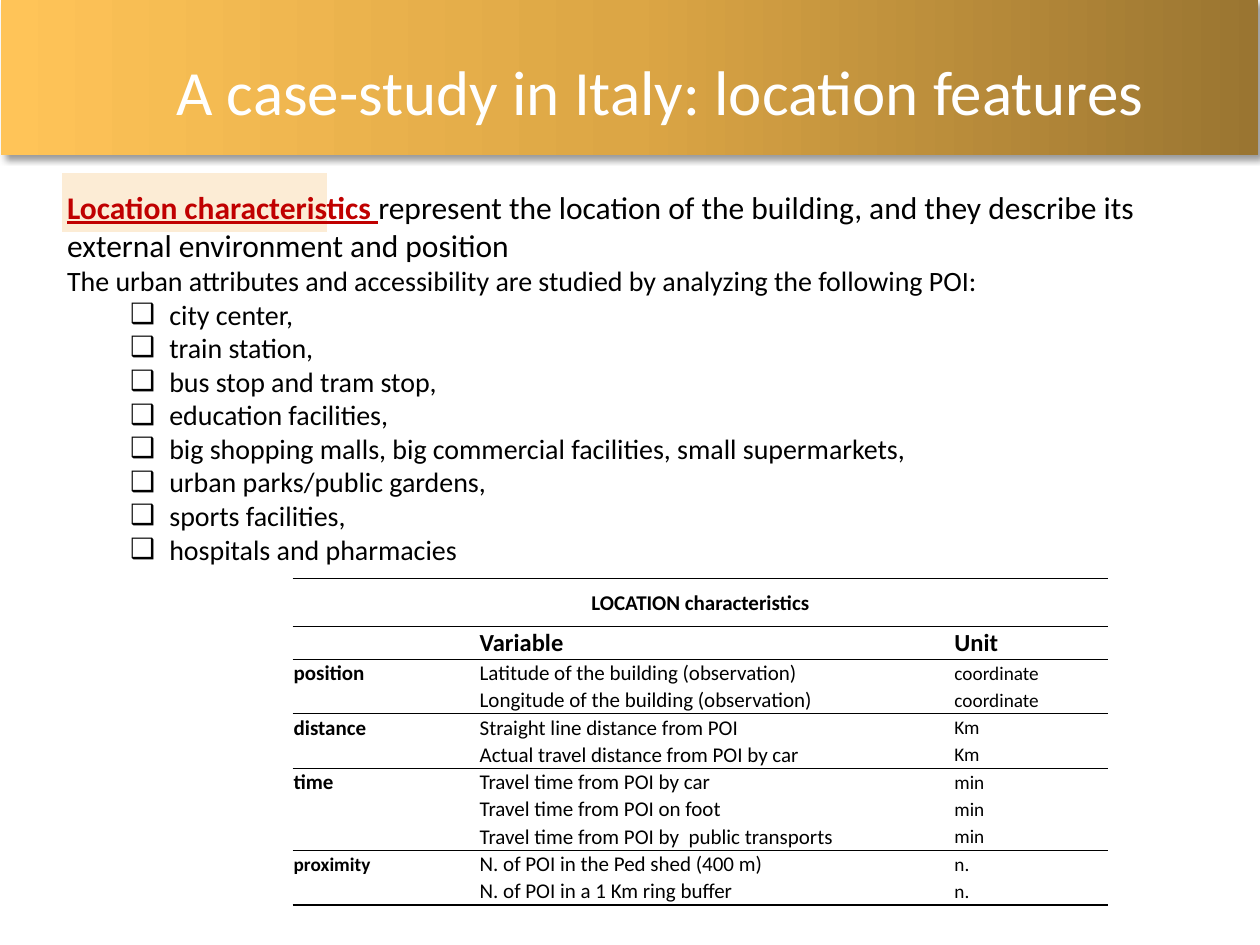
from lxml import etree
from pptx import Presentation, util as u
from pptx.dml.color import RGBColor
from pptx.enum import shapes, text
from pptx.oxml import parse_xml
from pptx.oxml.ns import nsdecls, qn

FONT = "Calibri"
WHITE = RGBColor(0xFF, 0xFF, 0xFF)
BLACK = RGBColor(0, 0, 0)
CRIMSON = RGBColor(0xC0, 0, 0)
CREAM = RGBColor(0xFC, 0xEC, 0xD5)
GOLDS = (RGBColor(0xFF, 0xC4, 0x58), RGBColor(0xDC, 0xA6, 0x45), RGBColor(0x9A, 0x75, 0x31))
NO_GRID_STYLE = "{2D5ABB26-0587-4C30-8999-92F81FD0307C}"

POINTS_OF_INTEREST = (
    "city center,",
    "train station,",
    "bus stop and tram stop,",
    "education facilities,",
    "big shopping malls, big commercial facilities, small supermarkets,",
    "urban parks/public gardens,",
    "sports facilities,",
    "hospitals and pharmacies",
)
FEATURE_GROUPS = (
    ("position", 12, (("Latitude of the building (observation)", "coordinate"),
                      ("Longitude of the building (observation)", "coordinate"))),
    ("distance", 12, (("Straight line distance from POI", "Km"),
                      ("Actual travel distance from POI by car", "Km"))),
    ("time", 12, (("Travel time from POI by car", "min"),
                  ("Travel time from POI on foot", "min"),
                  ("Travel time from POI by  public transports", "min"))),
    ("proximity", 11, (("N. of POI in the Ped shed (400 m)", "n."),
                       ("N. of POI in a 1 Km ring buffer", "n."))),
)


def add_run(paragraph, words, size, color=BLACK, bold=False, underline=False):
    """Append one formatted run to a paragraph and return it."""
    run = paragraph.add_run()
    run.text = words
    font = run.font
    font.name, font.size, font.bold = FONT, u.Pt(size), bold
    font.underline = underline
    font.color.rgb = color
    return run


def shadow_effect(blur, distance, angle, opacity):
    """Build a black outer shadow; lengths in points, opacity in percent."""
    return parse_xml(
        f'<a:effectLst {nsdecls("a")}><a:outerShdw blurRad="{u.Pt(blur)}" dist="{u.Pt(distance)}" '
        f'dir="{angle * 60000}" algn="tl" rotWithShape="0"><a:srgbClr val="{BLACK}">'
        f'<a:alpha val="{opacity * 1000}"/></a:srgbClr></a:outerShdw></a:effectLst>')


def place(shape, box):
    """Move a shape to a (left, top, width, height) box."""
    shape.left, shape.top, shape.width, shape.height = box


def add_banner(slide, box):
    """Draw the golden band and set the title over it."""
    left, top, width, height = box
    band = slide.shapes.add_shape(shapes.MSO_SHAPE.RECTANGLE, *box)
    band.line.fill.background()
    stops = "".join(f'<a:gs pos="{i * 50000}"><a:srgbClr val="{gold}"/></a:gs>'
                    for i, gold in enumerate(GOLDS))
    properties = band._element.spPr
    properties.insert(2, parse_xml(f'<a:gradFill {nsdecls("a")}><a:gsLst>{stops}</a:gsLst>'
                                   '<a:lin ang="0" scaled="0"/></a:gradFill>'))
    properties.append(shadow_effect(4, 3, 45, 40))

    title = slide.shapes.title
    place(title, (left + u.Cm(3.28), top + u.Cm(0.86), u.Cm(22.3), u.Cm(1.88)))
    frame = title.text_frame
    frame.auto_size = text.MSO_AUTO_SIZE.NONE
    frame.vertical_anchor = text.MSO_ANCHOR.BOTTOM
    heading = frame.paragraphs[0]
    heading.alignment = text.PP_ALIGN.LEFT
    heading.line_spacing = 0.9
    run = add_run(heading, "A case-study in Italy: location features", 36, WHITE)
    run.font._element.find(qn("a:solidFill")).addnext(shadow_effect(4, 3, 45, 50))
    slide.shapes._spTree.append(title._element)


def format_item(paragraph, indent=0, hanging=0, bullet=None):
    """Set the indents, spacing and bullet of a body paragraph."""
    paragraph.alignment = text.PP_ALIGN.LEFT
    paragraph.space_before = u.Pt(0)
    properties = paragraph._p.get_or_add_pPr()
    properties.set("marL", str(u.Cm(indent)))
    properties.set("indent", str(-u.Cm(hanging)))
    if bullet:
        etree.SubElement(properties, qn("a:buFont"), typeface="Arial")
        etree.SubElement(properties, qn("a:buChar"), char=bullet)
    else:
        etree.SubElement(properties, qn("a:buNone"))


def add_description(slide, box):
    """Fill the body with the definition and the list of POI."""
    left, top, _, _ = box
    highlight = slide.shapes.add_shape(shapes.MSO_SHAPE.RECTANGLE, left + u.Cm(0.13),
                                       top - u.Cm(0.18), u.Cm(5.38), u.Cm(1.22))
    highlight.shadow.inherit = False
    highlight.fill.solid()
    highlight.fill.fore_color.rgb = CREAM
    highlight.line.color.rgb = WHITE
    highlight.line.width = u.Pt(1)

    body = slide.placeholders[1]
    place(body, box)
    frame = body.text_frame
    frame.auto_size = text.MSO_AUTO_SIZE.NONE
    definition = frame.paragraphs[0]
    format_item(definition)
    add_run(definition, "Location characteristics ", 18, CRIMSON, True, True)
    add_run(definition, "represent the location of the building, and they describe its "
                        "external environment and position", 18)
    intro = frame.add_paragraph()
    format_item(intro)
    add_run(intro, "The urban attributes and accessibility are studied by analyzing "
                   "the following POI:", 16)
    for point in POINTS_OF_INTEREST:
        item = frame.add_paragraph()
        item.level = 1
        format_item(item, 2.06, 0.79, "❑")
        add_run(item, point, 16)
    slide.shapes._spTree.append(body._element)


def fill_cell(cell, words, size, bold=False):
    """Write one table cell on white with narrow margins."""
    cell.margin_left = cell.margin_top = cell.margin_right = u.Cm(0.02)
    cell.margin_bottom = 0
    cell.vertical_anchor = text.MSO_ANCHOR.MIDDLE
    cell.fill.solid()
    cell.fill.fore_color.rgb = WHITE
    paragraph = cell.text_frame.paragraphs[0]
    if words:
        add_run(paragraph, words, size, bold=bold)
    else:
        etree.SubElement(paragraph._p, qn("a:endParaRPr"), sz=str(size * 100))


def rule_row(table, row, side, width, first=0):
    """Draw a line along the top (lnT) or bottom (lnB) of a row."""
    for column in range(first, len(table.columns)):
        properties = table.cell(row, column)._tc.get_or_add_tcPr()
        line = parse_xml(f'<a:{side} {nsdecls("a")} w="{u.Pt(width)}"><a:solidFill>'
                         f'<a:srgbClr val="{BLACK}"/></a:solidFill></a:{side}>')
        properties.insert(len(properties) - 1, line)


def add_feature_table(slide, box):
    """Build the table of location variables and their units."""
    row_count = 2 + sum(len(variables) for _, _, variables in FEATURE_GROUPS)
    frame = slide.shapes.add_table(row_count, 3, *box)
    table = frame.table
    table.first_row = table.horz_banding = False
    table._tbl.tblPr.find(qn("a:tableStyleId")).text = NO_GRID_STYLE
    for column, width in zip(table.columns, (3.75, 9.57, 3.12)):
        column.width = u.Cm(width)
    for row, height in zip(table.rows, [0.97, 0.66] + [0.55] * (row_count - 2)):
        row.height = u.Cm(height)

    for column, words in enumerate(("LOCATION characteristics", "", "")):
        fill_cell(table.cell(0, column), words, 12, True)
    table.cell(0, 0).merge(table.cell(0, 2))
    table.cell(0, 0).text_frame.paragraphs[0].alignment = text.PP_ALIGN.CENTER
    for column, words in enumerate(("", "Variable", "Unit")):
        fill_cell(table.cell(1, column), words, 14, True)
    rule_row(table, 0, "lnT", 0.5)
    rule_row(table, 0, "lnB", 1)
    rule_row(table, 1, "lnT", 1)
    rule_row(table, 1, "lnB", 1, first=1)

    row = 2
    for group, group_size, variables in FEATURE_GROUPS:
        if row > 2:
            rule_row(table, row - 1, "lnB", 0.5)
        for i, (variable, unit) in enumerate(variables):
            fill_cell(table.cell(row, 0), "" if i else group, group_size, True)
            fill_cell(table.cell(row, 1), variable, 12)
            fill_cell(table.cell(row, 2), unit, 11)
            row += 1
    rule_row(table, row - 1, "lnB", 1)


def main():
    """Build the slide and save it."""
    deck = Presentation()
    deck.slide_width, deck.slide_height = u.Cm(25.4), u.Cm(19.05)
    slide = deck.slides.add_slide(deck.slide_layouts[1])
    add_banner(slide, (u.Cm(0.02), 0, u.Cm(25.35), u.Cm(3.12)))
    add_description(slide, (u.Cm(1.1), u.Cm(3.66), u.Cm(23.75), u.Cm(7.95)))
    add_feature_table(slide, (u.Cm(5.9), u.Cm(11.66), u.Cm(16.44), u.Cm(6.6)))
    deck.save("out.pptx")


if __name__ == "__main__":
    main()
